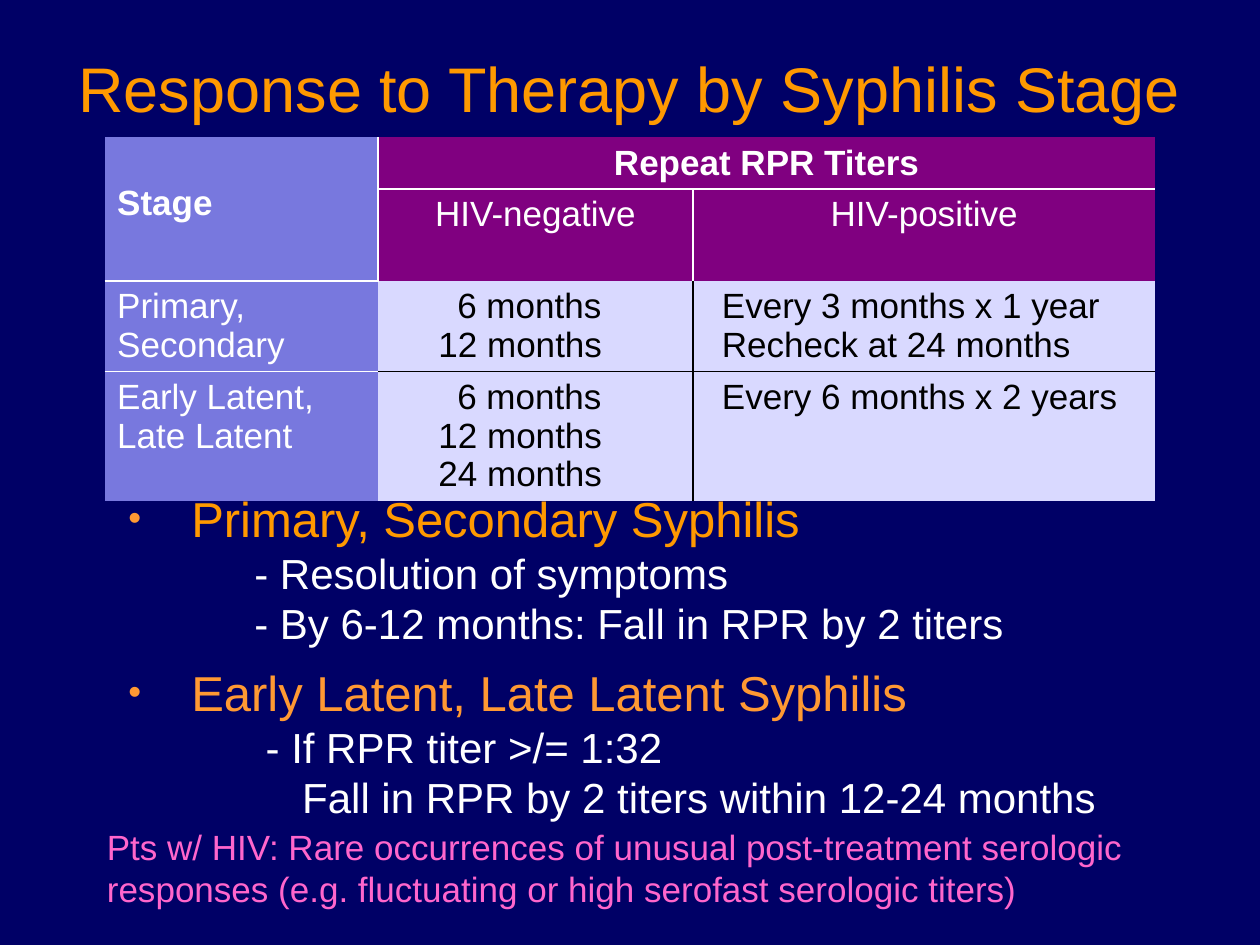
from dataclasses import dataclass
from lxml.etree import SubElement
from pptx import Presentation
from pptx.dml.color import RGBColor
from pptx.enum.text import MSO_ANCHOR, PP_ALIGN
from pptx.oxml.ns import qn
from pptx.util import Inches, Pt


@dataclass(frozen=True)
class Theme:
    font: str = "Arial"
    back: str = "000066"
    gold: str = "FF9900"
    amber: str = "FF9933"
    pink: str = "FF66CC"
    white: str = "FFFFFF"
    black: str = "000000"
    stage: str = "7878DE"
    head: str = "800080"
    pale: str = "D9D9FF"
    title: int = 36
    topic: int = 28
    point: int = 24
    small: int = 20
    pitch: float = 22.2


@dataclass(frozen=True)
class Line:
    text: str
    size: int
    color: str
    left: float = 0
    hang: float = 0
    before: float = 0
    bold: bool = False
    align: PP_ALIGN = PP_ALIGN.LEFT


@dataclass(frozen=True)
class Box:
    row: int
    col: int
    fill: str
    lines: tuple[Line, ...]
    edges: str = ""
    ink: str = "FFFFFF"
    down: int = 1
    wide: int = 1
    top: float = 0.05


THEME = Theme()


def rgb(code: str) -> RGBColor:
    return RGBColor.from_string(code)


def apply(target, values: dict) -> None:
    for name, value in values.items():
        setattr(target, name, value)


def mark(props) -> None:
    tint = SubElement(props, qn("a:buClr"))
    SubElement(tint, qn("a:srgbClr"), val=THEME.amber)
    SubElement(props, qn("a:buSzPct"), val="75000")
    SubElement(props, qn("a:buFont"), typeface=THEME.font)
    SubElement(props, qn("a:buChar"), char="•")


def write(frame, lines: tuple[Line, ...], pitch: float | Pt = 1.0) -> None:
    for index, line in enumerate(lines):
        para = frame.add_paragraph() if index else frame.paragraphs[0]
        apply(para, {"alignment": line.align, "space_before": Pt(line.before),
                     "line_spacing": pitch, "text": line.text})
        props = para._p.get_or_add_pPr()
        props.set("marL", str(Inches(line.left)))
        props.set("indent", str(Inches(-line.hang)))
        if line.hang:
            mark(props)
        for run in para.runs:
            apply(run.font, {"name": THEME.font, "size": Pt(line.size), "bold": line.bold})
            run.font.color.rgb = rgb(line.color)


def label(slide, area: tuple[float, ...], lines: tuple[Line, ...],
          anchor: MSO_ANCHOR = MSO_ANCHOR.TOP) -> None:
    frame = slide.shapes.add_textbox(*map(Inches, area)).text_frame
    apply(frame, {"word_wrap": True, "vertical_anchor": anchor})
    write(frame, lines)


def border(cell, edges: str, ink: str) -> None:
    props = cell._tc.get_or_add_tcPr()
    for place, side in enumerate("LRTB"):
        edge = SubElement(props, qn(f"a:ln{side}"), w=str(Pt(1)))
        props.insert(place, edge)
        if side in edges:
            fill = SubElement(edge, qn("a:solidFill"))
            SubElement(fill, qn("a:srgbClr"), val=ink)
        else:
            SubElement(edge, qn("a:noFill"))


def paint(table, box: Box) -> None:
    for row in range(box.row, box.row + box.down):
        for col in range(box.col, box.col + box.wide):
            cell = table.cell(row, col)
            cell.fill.solid()
            cell.fill.fore_color.rgb = rgb(box.fill)
            border(cell, box.edges, box.ink)
    cell = table.cell(box.row, box.col)
    if box.down * box.wide > 1:
        cell.merge(table.cell(box.row + box.down - 1, box.col + box.wide - 1))
    cell.margin_top = Inches(box.top)
    write(cell.text_frame, box.lines, Pt(THEME.pitch))


def head(text: str, bold: bool = False) -> tuple[Line, ...]:
    return (Line(text, THEME.small, THEME.white, bold=bold, align=PP_ALIGN.CENTER),)


def stage(*texts: str, bold: bool = False) -> tuple[Line, ...]:
    return tuple(Line(text, THEME.small, THEME.white, bold=bold) for text in texts)


def months(*counts: int) -> tuple[Line, ...]:
    return tuple(Line(f"{count} months", THEME.small, THEME.black,
                      left=0.38 if count > 9 else 0.53) for count in counts)


def plan(*texts: str) -> tuple[Line, ...]:
    return tuple(Line(text, THEME.small, THEME.black, left=0.13) for text in texts)


def topic(text: str, color: str, before: float = 0) -> Line:
    return Line(text, THEME.topic, color, 0.5, 0.5, before)


def point(text: str, left: float = 1) -> Line:
    return Line(text, THEME.point, THEME.white, left)


def grid(slide) -> None:
    cols, rows = (2.17, 2.5, 3.67), (0.41, 0.72, 0.72, 1.03)
    area = (0.83, 1.09, sum(cols), sum(rows))
    table = slide.shapes.add_table(len(rows), len(cols), *map(Inches, area)).table
    apply(table, {"first_row": False, "horz_banding": False})
    for col, width in zip(table.columns, cols):
        col.width = Inches(width)
    for row, height in zip(table.rows, rows):
        row.height = Inches(height)
    look, black = THEME, THEME.black
    boxes = (
        Box(0, 0, look.stage, stage("Stage", bold=True), "RB", down=2, top=0.37),
        Box(0, 1, look.head, head("Repeat RPR Titers", True), "LB", wide=2),
        Box(1, 1, look.head, head("HIV-negative"), "LTR"),
        Box(1, 2, look.head, head("HIV-positive"), "LT"),
        Box(2, 0, look.stage, stage("Primary,", "Secondary"), "TB"),
        Box(2, 1, look.pale, months(6, 12), "RB", black),
        Box(2, 2, look.pale, plan("Every 3 months x 1 year", "Recheck at 24 months"),
            "LB", black),
        Box(3, 0, look.stage, stage("Early Latent,", "Late Latent"), "T"),
        Box(3, 1, look.pale, months(6, 12, 24), "TR", black),
        Box(3, 2, look.pale, plan("Every 6 months x 2 years"), "LT", black),
    )
    for box in boxes:
        paint(table, box)


def main() -> None:
    deck = Presentation()
    apply(deck, {"slide_width": Inches(10), "slide_height": Inches(7.5)})
    slide = deck.slides.add_slide(deck.slide_layouts[6])
    slide.background.fill.solid()
    slide.background.fill.fore_color.rgb = rgb(THEME.back)
    label(slide, (0.92, 3.83, 8.92, 2.67), (
        topic("Primary, Secondary Syphilis", THEME.gold),
        point("- Resolution of symptoms"),
        point("- By 6-12 months: Fall in RPR by 2 titers"),
        topic("Early Latent, Late Latent Syphilis", THEME.amber, 8),
        point("- If RPR titer >/= 1:32", 1.09),
        point("Fall in RPR by 2 titers within 12-24 months", 1.38),
    ))
    label(slide, (0.15, -0.17, 9.69, 1.21), (
        Line("Response to Therapy by Syphilis Stage", THEME.title, THEME.gold,
             align=PP_ALIGN.CENTER),
    ), MSO_ANCHOR.BOTTOM)
    grid(slide)
    label(slide, (0.75, 6.5, 9.5, 1.08), (
        Line("Pts w/ HIV: Rare occurrences of unusual post-treatment serologic\v"
             "responses (e.g. fluctuating or high serofast serologic titers)",
             THEME.small, THEME.pink),
    ))
    deck.save("out.pptx")


if __name__ == "__main__":
    main()
